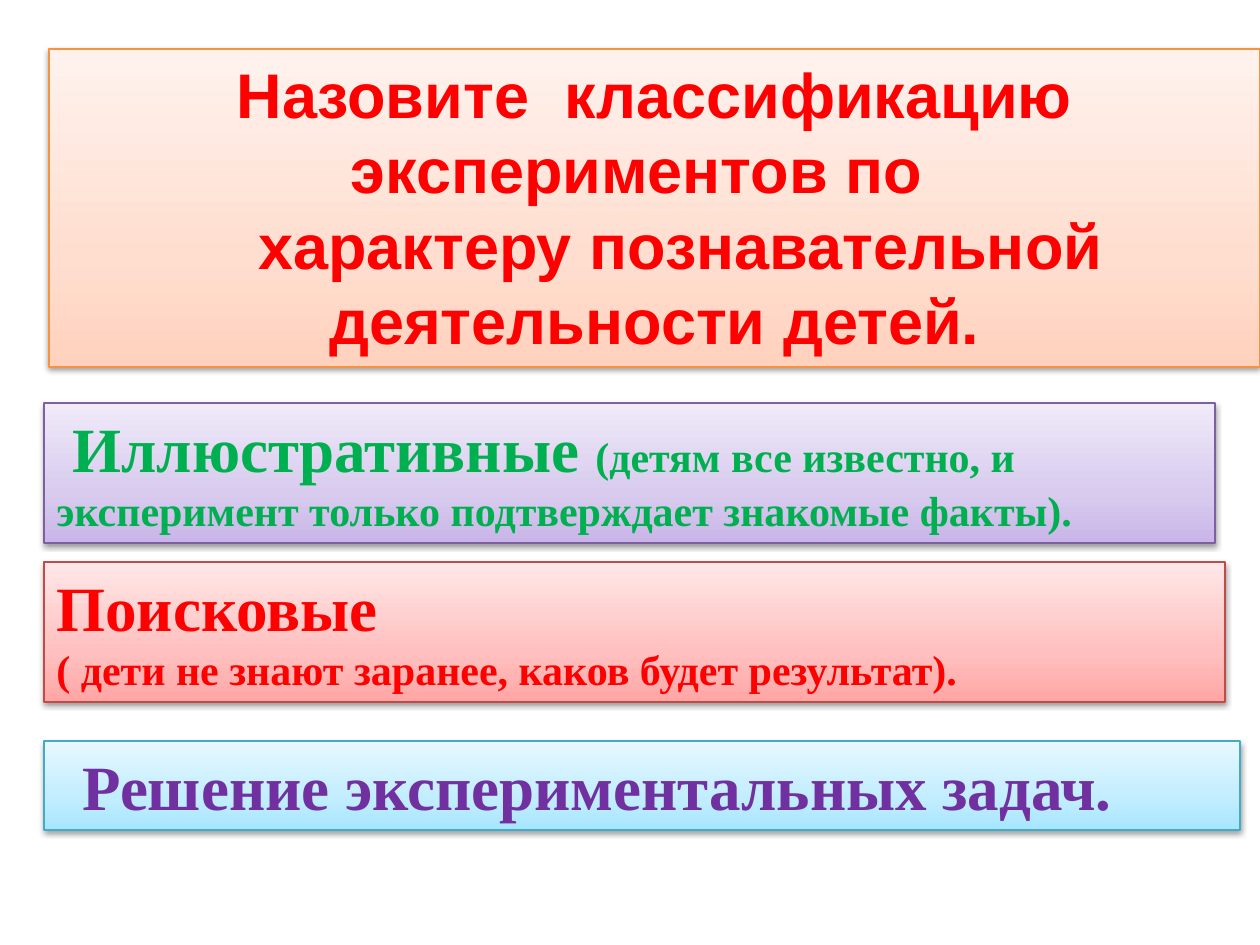
from copy import deepcopy

from lxml import etree
from pptx import Presentation
from pptx.dml.color import RGBColor
from pptx.enum.text import MSO_AUTO_SIZE, PP_ALIGN
from pptx.oxml.ns import nsdecls
from pptx.util import Emu, Pt

PX = 914400 // 126
SERIF = "Times New Roman"
LEFT, CENTER, JUSTIFY = PP_ALIGN.LEFT, PP_ALIGN.CENTER, PP_ALIGN.JUSTIFY
STOPS = (0, 0.35, 1)

# Panels: box in px, gradient from bottom to top, outline, font, alignment and
# paragraphs as (first-line indent px, right margin px, runs of text, size, colour)
PANELS = [
    dict(box=(44, 403, 1171, 140), fill=("C9B5E8", "D8CBEE", "F0EAF9"),
         line="7D60A0", font=SERIF, align=LEFT,
         paragraphs=[(16, 0, [
             ("Иллюстративные ", 36, "00B050"),
             ("(детям все известно, и эксперимент только подтверждает "
              "знакомые факты).", 24, "00B050")])]),
    dict(box=(44, 562, 1181, 140), fill=("FFA6A5", "FFC0BF", "FFE7E7"),
         line="BF4C48", font=SERIF, align=JUSTIFY,
         paragraphs=[
             (0, 0, [("Поисковые", 36, "FF0000")]),
             (0, 0, [("( дети не знают заранее, каков будет результат).",
                      24, "FF0000")])]),
    dict(box=(44, 741, 1196, 89), fill=("A7E6FF", "C1EDFF", "E7F8FF"),
         line="46AAC5", font=SERIF, align=JUSTIFY,
         paragraphs=[(26, 0, [
             ("Решение экспериментальных задач.", 36, "7030A0")])]),
    dict(box=(49, 49, 1211, 318), fill=("FFD2BD", "FFDED0", "FFF2ED"),
         line="F69240", font="Arial", align=CENTER,
         paragraphs=[
             (36, 36, [("Назовите  классификацию экспериментов по",
                        36, "FF0000")]),
             (52, 0, [("характеру познавательной деятельности детей.",
                       36, "FF0000")])]),
]

SHADOW = (f'<a:effectLst {nsdecls("a")}>'
          '<a:outerShdw blurRad="40000" dist="20000" dir="5400000" rotWithShape="0">'
          '<a:srgbClr val="000000"><a:alpha val="38000"/></a:srgbClr>'
          '</a:outerShdw></a:effectLst>')


def rgb(value):
    return RGBColor.from_string(value)


def style_box(sp, colors, line):
    fill = sp.fill
    fill.gradient()
    fill.gradient_angle = 90
    # The default gradient has two stops; add the middle one
    last = fill._fill._gradFill.gsLst[-1]
    last.addprevious(deepcopy(last))
    for stop, position, color in zip(fill.gradient_stops, STOPS, colors):
        stop.position = position
        stop.color.rgb = rgb(color)
    sp.line.color.rgb = rgb(line)
    sp.line.width = Pt(0.75)
    sp._element.spPr.append(etree.fromstring(SHADOW))


def write_text(tf, paragraphs, font, align):
    tf.word_wrap = True
    tf.auto_size = MSO_AUTO_SIZE.SHAPE_TO_FIT_TEXT
    for i, (indent, margin, runs) in enumerate(paragraphs):
        p = tf.add_paragraph() if i else tf.paragraphs[0]
        p.alignment = align
        pPr = p._p.get_or_add_pPr()
        pPr.set("marL", "0")
        pPr.set("marR", str(margin * PX))
        pPr.set("indent", str(indent * PX))
        for text, size, color in runs:
            r = p.add_run()
            r.text = text
            r.font.name = font
            r.font.size = Pt(size)
            r.font.bold = True
            r.font.color.rgb = rgb(color)


prs = Presentation()
prs.slide_width, prs.slide_height = Emu(1260 * PX), Emu(945 * PX)
s = prs.slides.add_slide(prs.slide_layouts[6])

for panel in PANELS:
    sp = s.shapes.add_textbox(*(Emu(v * PX) for v in panel["box"]))
    style_box(sp, panel["fill"], panel["line"])
    write_text(sp.text_frame, panel["paragraphs"], panel["font"], panel["align"])

prs.save("out.pptx")
